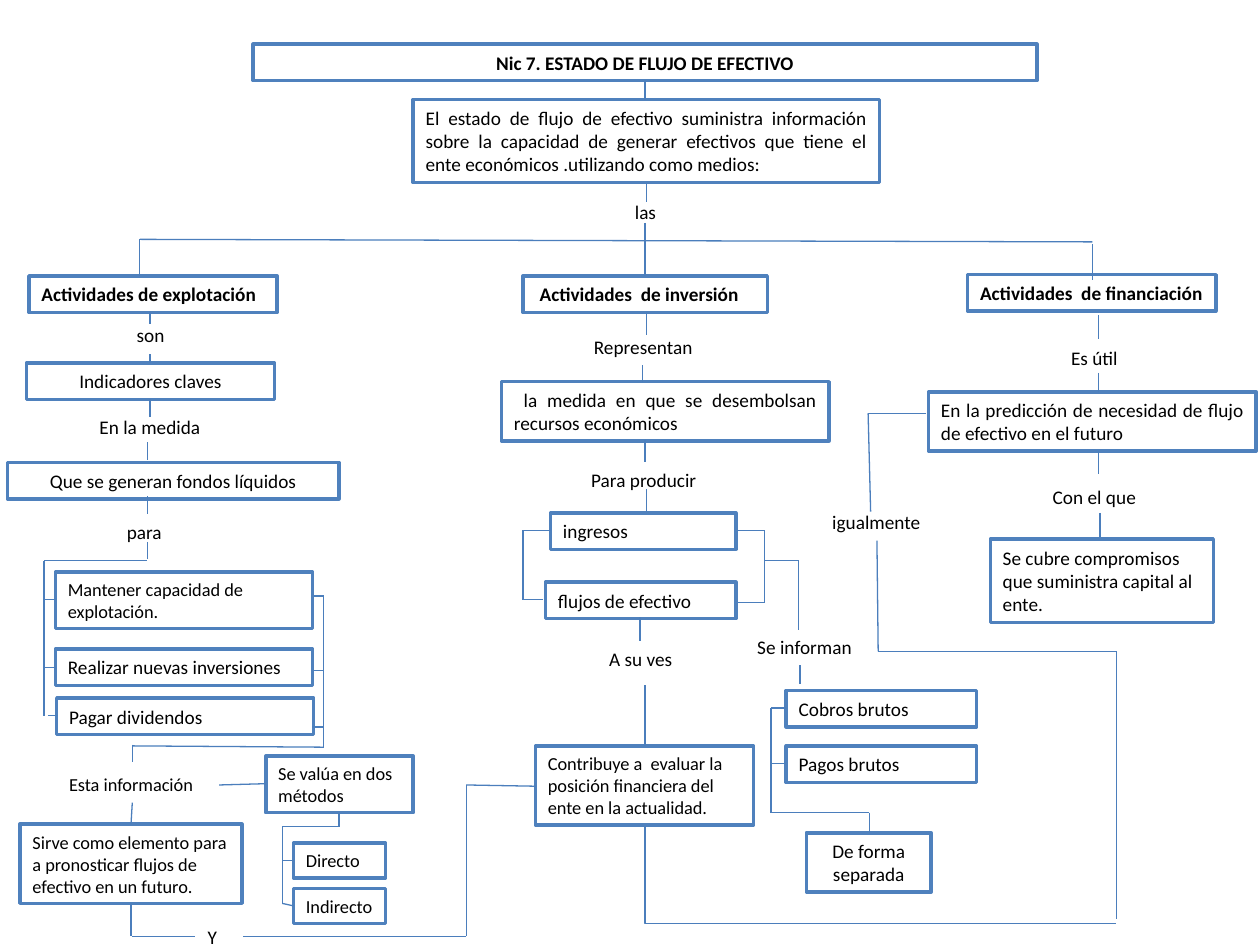
from dataclasses import dataclass
from itertools import pairwise

import pptx
import pptx.dml.color
import pptx.enum.shapes
import pptx.enum.text
import pptx.oxml
import pptx.oxml.ns
import pptx.util

Align = pptx.enum.text.PP_ALIGN
Connector = pptx.enum.shapes.MSO_CONNECTOR
LEFT, CENTER, JUSTIFY = Align.LEFT, Align.CENTER, Align.JUSTIFY
BORDER = pptx.dml.color.RGBColor(0x4F, 0x81, 0xBD)
LINK = pptx.dml.color.RGBColor(0x4B, 0x7E, 0xBC)
WHITE = pptx.dml.color.RGBColor(0xFF, 0xFF, 0xFF)
BLACK = pptx.dml.color.RGBColor(0x00, 0x00, 0x00)

GRID_CM = 2.54  # the slide is 10 by 7.5 grid units
ROW = 0.29  # height of a one-line text

Point = tuple[float, float]


@dataclass
class Concept:
    """A piece of text on the map, placed in grid units."""
    text: str
    left: float
    top: float
    width: float
    height: float = ROW
    align: Align = LEFT
    size: float = 11
    bold: bool = False
    wrap: bool = True


BOXES = [
    Concept("Nic 7. ESTADO DE FLUJO DE EFECTIVO", 2.01, 0.35, 6.22, align=CENTER, bold=True),
    Concept("El estado de flujo de efectivo suministra información sobre la capacidad de "
            "generar efectivos que tiene el ente económicos .utilizando como medios:",
            3.28, 0.79, 3.7, 0.66, JUSTIFY),
    # Explotación
    Concept("Actividades de explotación", 0.23, 2.19, 1.97, bold=True),
    Concept("Indicadores claves", 0.21, 2.88, 1.97, align=CENTER),
    Concept("Que se generan fondos líquidos", 0.06, 3.67, 2.63, align=CENTER),
    Concept("Mantener capacidad de explotación.", 0.44, 4.54, 2.04, 0.45, size=10.5),
    Concept("Realizar nuevas inversiones", 0.44, 5.15, 2.04),
    Concept("Pagar dividendos", 0.45, 5.54, 2.04, align=JUSTIFY),
    Concept("Sirve como elemento para a pronosticar flujos de efectivo en un futuro.",
            0.16, 6.54, 1.76, 0.63, size=10.5),
    Concept("Se valúa en dos métodos", 2.11, 6, 1.17, 0.45, size=10.5),
    Concept("Directo", 2.33, 6.69, 0.73, 0.28, size=10.5),
    Concept("Indirecto", 2.33, 7.05, 0.73, 0.28, size=10.5, wrap=False),
    # Inversión
    Concept(" Actividades  de inversión", 4.15, 2.19, 1.94, bold=True),
    Concept(" la medida en que se desembolsan recursos económicos", 3.98, 3.03, 2.6, 0.47, JUSTIFY),
    Concept("ingresos", 4.37, 4.07, 1.47),
    Concept("flujos de efectivo", 4.33, 4.62, 1.51, align=JUSTIFY),
    Concept("Contribuye a  evaluar la posición financiera del ente en la actualidad.",
            4.25, 5.92, 1.73, 0.63, size=10.5),
    Concept("Cobros brutos", 6.24, 5.48, 1.51, align=JUSTIFY),
    Concept("Pagos brutos", 6.24, 5.92, 1.51, align=JUSTIFY),
    Concept("De forma separada", 6.4, 6.61, 0.99, 0.47, CENTER),
    # Financiación
    Concept("Actividades  de financiación", 7.68, 2.18, 1.97, bold=True, wrap=False),
    Concept("En la predicción de necesidad de flujo de efectivo en el futuro",
            7.37, 3.11, 2.6, 0.47, JUSTIFY),
    Concept("Se cubre compromisos que suministra capital al ente.", 7.86, 4.28, 1.77, 0.66),
]

LINKING_WORDS = [
    Concept("las", 4.94, 1.54, 0.39, wrap=False),
    Concept("son", 0.84, 2.52, 0.71, align=CENTER),
    Concept("En la medida", 0.68, 3.25, 1.02, align=CENTER),
    Concept("para", 0.72, 4.08, 0.85, align=CENTER),
    Concept("Esta información", 0.35, 6.09, 1.38, 0.28, CENTER, 10.5),
    Concept("Y", 1.55, 7.29, 0.38, wrap=False),
    Concept("Representan", 4.61, 2.61, 0.99, align=CENTER),
    Concept("Para producir", 4.53, 3.67, 1.16, align=CENTER),
    Concept("A su ves", 4.59, 5.09, 0.99, align=CENTER),
    Concept("Se informan", 5.89, 4.99, 0.99, align=CENTER),
    Concept("Es útil", 8.19, 2.7, 0.99, align=CENTER),
    Concept("Con el que", 8.19, 3.8, 0.99, align=CENTER),
    Concept("igualmente", 6.46, 4, 0.99, align=CENTER),
]

# Vertical links: x, top, bottom
DROPS = [
    (5.12, 0.64, 0.79), (5.13, 1.45, 1.6), (5.12, 1.77, 1.91), (5.12, 1.91, 2.19),
    (8.67, 1.94, 2.22),
    (1.19, 2.48, 2.57), (1.19, 2.81, 2.88), (1.19, 3.17, 3.31), (1.17, 3.51, 3.65),
    (1.17, 3.94, 4.08), (1.17, 4.3, 4.44), (1.05, 5.91, 6.05),
    (5.13, 2.48, 2.66), (5.1, 2.9, 3.03), (5.12, 3.49, 3.67), (5.13, 3.88, 4.06),
    (5.08, 4.9, 5.09), (5.12, 5.44, 5.92), (6.35, 5.28, 5.43),
    (8.72, 2.5, 2.69), (8.72, 2.96, 3.11), (8.72, 3.58, 3.76), (8.73, 4.07, 4.26),
]

# Short horizontal links: y, left, right
BRANCHES = [
    (4.76, 0.35, 0.44), (5.3, 0.35, 0.44), (5.68, 0.38, 0.46),
    (5.32, 2.49, 2.57), (5.77, 2.48, 2.57), (6.83, 2.24, 2.33),
    (6.06, 6.12, 6.24), (7.43, 1.05, 1.55),
]

# Links that turn corners
ROUTES: list[list[Point]] = [
    [(8.67, 1.92), (1.11, 1.9), (1.11, 2.19)],
    [(0.35, 5.68), (0.35, 4.45), (1.17, 4.45)],
    [(2.49, 4.73), (2.57, 4.73), (2.57, 5.93), (1.05, 5.92)],
    [(1.05, 6.37), (1.04, 6.54)],
    [(1.04, 7.17), (1.04, 7.43)],
    [(1.74, 6.23), (2.11, 6.22)],
    [(2.69, 6.45), (2.69, 6.56), (2.24, 6.56), (2.24, 7.17), (2.33, 7.19)],
    [(1.93, 7.43), (3.7, 7.43), (3.7, 6.23), (4.25, 6.24)],
    [(4.37, 4.21), (4.15, 4.21), (4.15, 4.76), (4.31, 4.76)],
    [(5.85, 4.21), (6.07, 4.21), (6.07, 4.78), (5.86, 4.78)],
    [(6.07, 4.45), (6.34, 4.45), (6.34, 5)],
    [(6.24, 5.62), (6.12, 5.62), (6.12, 6.45), (6.9, 6.45), (6.9, 6.61)],
    [(7.35, 3.28), (6.89, 3.28), (6.91, 4.06)],
    [(6.96, 4.29), (6.97, 5.17), (8.86, 5.17), (8.86, 7.29)],
]


def grid(*units: float) -> list[pptx.util.Cm]:
    return [pptx.util.Cm(unit * GRID_CM) for unit in units]


def apply(target, formats: dict) -> None:
    for attribute, value in formats.items():
        setattr(target, attribute, value)


def write(shape, concept: Concept) -> None:
    frame = shape.text_frame
    apply(frame, {"word_wrap": concept.wrap,
                  "auto_size": pptx.enum.text.MSO_AUTO_SIZE.SHAPE_TO_FIT_TEXT})
    paragraph = frame.paragraphs[0]
    paragraph.alignment = concept.align
    run = paragraph.add_run()
    run.text = concept.text
    apply(run.font, {"name": "Calibri", "size": pptx.util.Pt(concept.size), "bold": concept.bold})
    run.font.color.rgb = BLACK


def draw_box(slide, concept: Concept) -> None:
    box = slide.shapes.add_shape(
        pptx.enum.shapes.MSO_SHAPE.RECTANGLE,
        *grid(concept.left, concept.top, concept.width, concept.height))
    box.shadow.inherit = False
    box.fill.solid()
    box.fill.fore_color.rgb = WHITE
    box.line.color.rgb = BORDER
    box.line.width = pptx.util.Pt(2)
    write(box, concept)


def draw_linking_word(slide, concept: Concept) -> None:
    word = slide.shapes.add_textbox(
        *grid(concept.left, concept.top, concept.width, concept.height))
    write(word, concept)


def draw_link(slide, start: Point, end: Point, kind: Connector = Connector.STRAIGHT):
    link = slide.shapes.add_connector(kind, *grid(*start, *end))
    link.line.color.rgb = LINK
    link.line.width = pptx.util.Pt(0.75)
    link._element.spPr.append(pptx.oxml.parse_xml(
        f"<a:effectLst {pptx.oxml.ns.nsdecls('a')}/>"))
    return link


def draw_corner_link(slide, start: Point, end: Point) -> None:
    """Run down from start, then right to end, as one single-bend connector."""
    (x1, y1), (x2, y2) = start, end
    middle_x, middle_y = (x1 + x2) / 2, (y1 + y2) / 2
    half_run, half_drop = (x2 - x1) / 2, (y2 - y1) / 2
    link = draw_link(slide, (middle_x - half_drop, middle_y - half_run),
                     (middle_x + half_drop, middle_y + half_run), Connector.ELBOW)
    properties = link._element.spPr
    apply_xml = {"a:xfrm": {"rot": "16200000", "flipH": "1"},
                 "a:prstGeom": {"prst": "bentConnector2"}}
    for tag, attributes in apply_xml.items():
        properties.find(pptx.oxml.ns.qn(tag)).attrib.update(attributes)


def main() -> None:
    deck = pptx.Presentation()
    deck.slide_width, deck.slide_height = grid(10, 7.5)
    slide = deck.slides.add_slide(deck.slide_layouts[6])
    for concept in BOXES:
        draw_box(slide, concept)
    for concept in LINKING_WORDS:
        draw_linking_word(slide, concept)
    for x, top, bottom in DROPS:
        draw_link(slide, (x, top), (x, bottom))
    for y, left, right in BRANCHES:
        draw_link(slide, (left, y), (right, y))
    for route in ROUTES:
        for start, end in pairwise(route):
            draw_link(slide, start, end)
    draw_corner_link(slide, (5.12, 6.56), (8.86, 7.33))
    deck.save("out.pptx")


if __name__ == "__main__":
    main()
